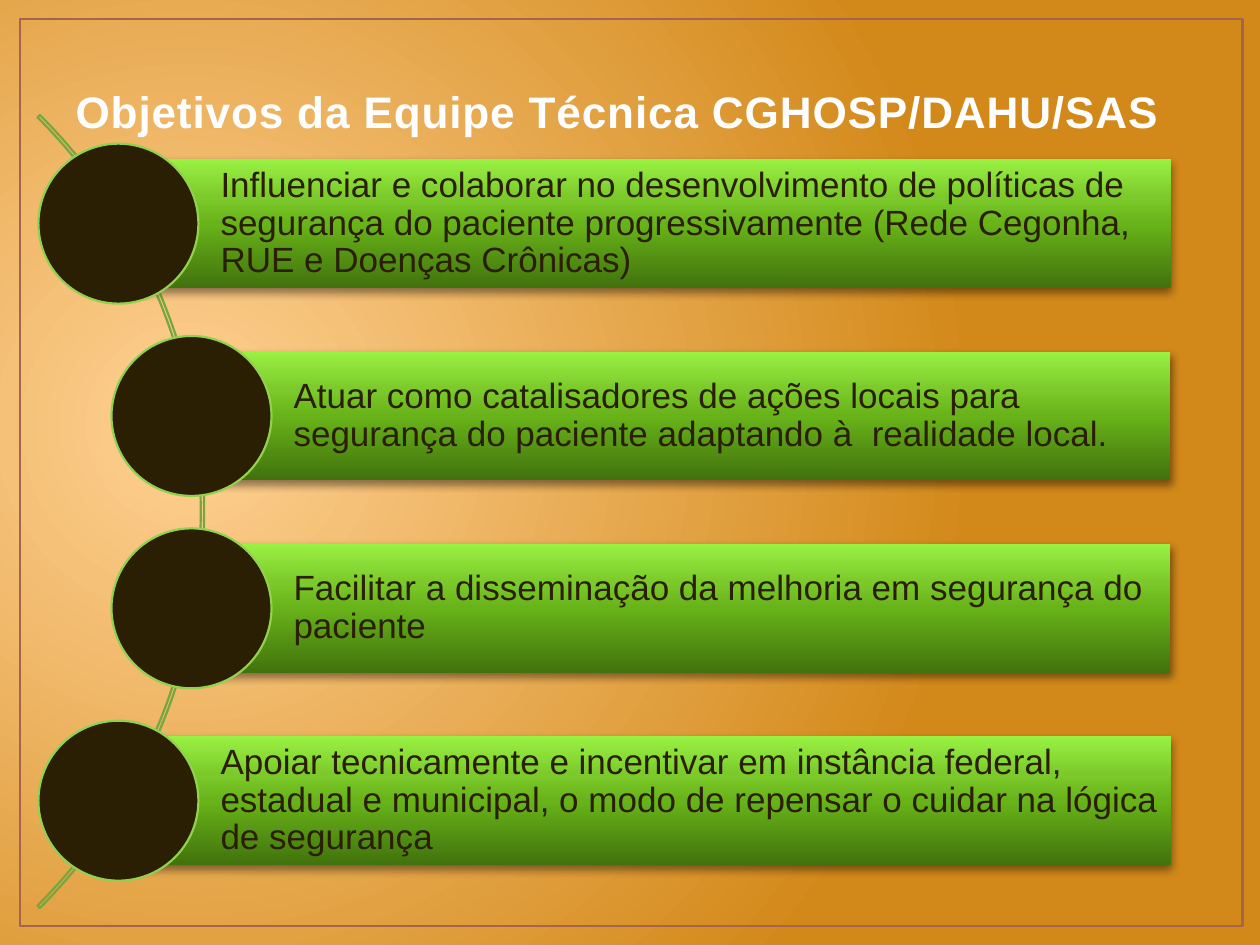
import pptx
import pptx.util
import pptx.dml.color
import pptx.enum.shapes
import pptx.enum.text
import pptx.oxml
import pptx.oxml.ns

Inches = pptx.util.Inches
Pt = pptx.util.Pt
SHAPES = pptx.enum.shapes.MSO_SHAPE
ANCHORS = pptx.enum.text.MSO_ANCHOR
ALIGN = pptx.enum.text.PP_ALIGN

COLOURS = {
    "glow": "FFD193", "amber": "D3891A", "frame": "A5644E",
    "title": "FEFEFE", "title_edge": "49721E", "arc": "75A740",
    "ink": "2A1F03", "ring": "92D050", "shadow": "000000",
    "bar_dark": "41720D", "bar_mid": "68B319",
    "bar_soft": "7BC92A", "bar_light": "99F143",
}
BACKDROP_STOPS = [(0, "glow"), (100, "amber")]
BAR_STOPS = [(0, "bar_dark"), (50, "bar_mid"), (70, "bar_soft"), (100, "bar_light")]
RADIAL = '<a:path path="circle"><a:fillToRect l="15000" t="50000" r="85000" b="60000"/></a:path>'
UPWARD = '<a:lin ang="16200000" scaled="0"/>'

TITLE = "Objetivos da Equipe Técnica CGHOSP/DAHU/SAS"
GOALS = [
    (0.94, "Influenciar e colaborar no desenvolvimento de políticas de segurança "
           "do paciente progressivamente (Rede Cegonha, RUE e Doenças Crônicas)"),
    (1.52, "Atuar como catalisadores de ações locais para  segurança do paciente "
           "adaptando à  realidade local."),
    (1.52, "Facilitar a disseminação da melhoria em segurança do paciente"),
    (0.94, "Apoiar tecnicamente e incentivar em instância federal, estadual e "
           "municipal, o modo de repensar o cuidar na lógica de segurança"),
]


def colour(name):
    """Return the named colour as an RGB value."""
    return pptx.dml.color.RGBColor.from_string(COLOURS[name])


def apply(target, values):
    """Set every attribute in a dict of format values."""
    for name, value in values.items():
        setattr(target, name, value)


def xml(tag, body, attributes=""):
    """Build a drawing element from its tag, content and attributes."""
    namespace = pptx.oxml.ns.nsdecls("a")
    return pptx.oxml.parse_xml(f"<a:{tag} {namespace} {attributes}>{body}</a:{tag}>")


def set_gradient(fill, owner, stops, direction):
    """Give a fill the listed gradient stops and direction."""
    fill.gradient()
    old = owner.find(".//" + pptx.oxml.ns.qn("a:gradFill"))
    points = "".join(
        f'<a:gs pos="{place * 1000}"><a:srgbClr val="{COLOURS[name]}"/></a:gs>'
        for place, name in stops)
    new = xml("gradFill", f"<a:gsLst>{points}</a:gsLst>{direction}", 'rotWithShape="1"')
    old.getparent().replace(old, new)


def add_outline(page, kind, box, line, weight, fill=None):
    """Add an outlined shape, filled only when a colour is named."""
    shape = page.shapes.add_shape(kind, *map(Inches, box))
    shape.shadow.inherit = False
    if fill:
        shape.fill.solid()
        shape.fill.fore_color.rgb = colour(fill)
    else:
        shape.fill.background()
    shape.line.color.rgb = colour(line)
    shape.line.width = Pt(weight)
    return shape


def write(shape, text, frame_format, para_format, font_format, ink):
    """Write one formatted paragraph into a shape and return its span."""
    frame = shape.text_frame
    apply(frame, frame_format)
    para = frame.paragraphs[0]
    apply(para, para_format)
    span = para.add_run()
    span.text = text
    apply(span.font, font_format)
    span.font.color.rgb = colour(ink)
    return span


def draw_backdrop(page, box):
    """Paint the radial background and its thin frame."""
    set_gradient(page.background.fill, page.element, BACKDROP_STOPS, RADIAL)
    add_outline(page, SHAPES.RECTANGLE, box, "frame", 1.5)


def draw_title(page, box):
    """Place and format the title placeholder."""
    title = page.shapes.title
    apply(title, dict(zip(("left", "top", "width", "height"), map(Inches, box))))
    span = write(
        title, TITLE,
        {"vertical_anchor": ANCHORS.BOTTOM, "word_wrap": True},
        {"alignment": ALIGN.LEFT},
        {"name": "Arial", "size": Pt(25.2), "bold": True}, "title")
    properties = span.font._element if hasattr(span.font, "_element") else span._r.get_or_add_rPr()
    properties.set("spc", "50")
    edge = f'<a:solidFill><a:srgbClr val="{COLOURS["title_edge"]}"/></a:solidFill>'
    properties.insert(0, xml("ln", edge, f'w="{Pt(1.05)}"'))


def draw_bar(page, box, text):
    """Draw one shaded green bar holding a goal."""
    bar = page.shapes.add_shape(SHAPES.RECTANGLE, *map(Inches, box))
    bar.line.fill.background()
    set_gradient(bar.fill, bar.element.spPr, BAR_STOPS, UPWARD)
    bar.shadow.inherit = False
    effects = bar.element.spPr.find(pptx.oxml.ns.qn("a:effectLst"))
    tint = f'<a:srgbClr val="{COLOURS["shadow"]}"><a:alpha val="43000"/></a:srgbClr>'
    effects.append(xml(
        "outerShdw", tint,
        f'blurRad="{Pt(5)}" dist="{Pt(2)}" dir="5400000" rotWithShape="0"'))
    margin = Inches(0.06)
    write(
        bar, text,
        {"vertical_anchor": ANCHORS.MIDDLE, "word_wrap": True,
         "margin_left": Inches(0.81), "margin_right": margin,
         "margin_top": margin, "margin_bottom": margin},
        {"alignment": ALIGN.LEFT, "line_spacing": 0.9},
        {"name": "Arial", "size": Pt(20)}, "ink")


def draw_goals(page, box):
    """Draw the arc and the evenly spaced goals with their discs."""
    left, top, width, height = box
    bar_height, disc = 1.02, 1.27
    pitch = (height - disc) / (len(GOALS) - 1)
    arc = add_outline(page, SHAPES.BLOCK_ARC, (-7.28, -0.39, 8.9, 8.9), "arc", 1.25)
    for index, value in enumerate((189, 27, 0.003)):
        arc.adjustments[index] = value
    for index, (start, text) in enumerate(GOALS):
        disc_top = top + index * pitch
        bar_top = disc_top + (disc - bar_height) / 2
        draw_bar(page, (start, bar_top, left + width - start, bar_height), text)
        add_outline(page, SHAPES.OVAL, (start - disc / 2, disc_top, disc, disc),
                    "ring", 1.25, "ink")


def main():
    """Build and save the slide."""
    deck = pptx.Presentation()
    apply(deck, {"slide_width": Inches(10), "slide_height": Inches(7.5)})
    page = deck.slides.add_slide(deck.slide_layouts[5])
    draw_backdrop(page, (0.16, 0.15, 9.7, 7.2))
    draw_title(page, (0.5, 0.36, 9, 0.78))
    draw_goals(page, (0.3, 1.14, 8.99, 5.85))
    deck.save("out.pptx")


if __name__ == "__main__":
    main()
